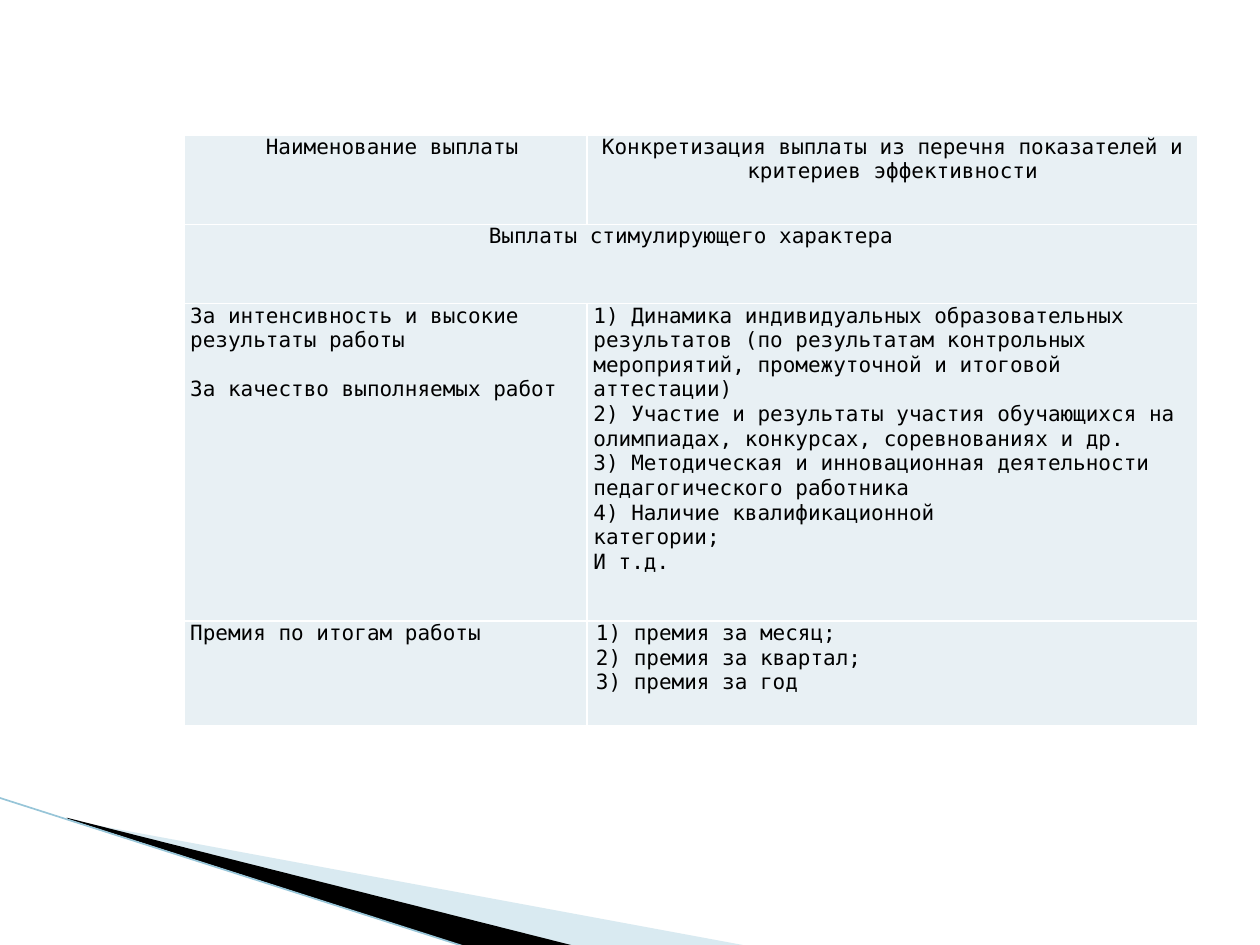
from dataclasses import dataclass

from lxml.etree import SubElement
from pptx import Presentation
from pptx.dml.color import RGBColor
from pptx.enum.shapes import MSO_CONNECTOR
from pptx.enum.text import PP_ALIGN
from pptx.oxml.ns import qn
from pptx.util import Inches, Pt


@dataclass(frozen=True)
class Theme:
    font: str = "DejaVu Sans Mono"
    size: Pt = Pt(12)
    text: RGBColor = RGBColor(0, 0, 0)
    cell: RGBColor = RGBColor(0xE8, 0xF0, 0xF4)
    border: str = "FFFFFF"
    pale_wedge: RGBColor = RGBColor(0xA0, 0xCB, 0xDC)
    dark_wedge: RGBColor = RGBColor(0, 0, 0)
    edge: RGBColor = RGBColor(0x97, 0xC5, 0xD8)


theme = Theme()


def add_wedge(slide, points, color, alpha=None):
    """Draw a closed outline through points in inches; alpha is a percentage."""
    start, *rest = [(Inches(x), Inches(y)) for x, y in points]
    builder = slide.shapes.build_freeform(*start)
    builder.add_line_segments(rest, close=True)
    sp = builder.convert_to_shape()
    sp.shadow.inherit = False
    sp.line.fill.background()
    sp.fill.solid()
    sp.fill.fore_color.rgb = color
    if alpha is not None:
        clr = sp.fill._xPr.find(qn("a:solidFill"))[0]
        SubElement(clr, qn("a:alpha"), val=str(alpha * 1000))


def set_borders(cell):
    tcPr = cell._tc.get_or_add_tcPr()
    for i, side in enumerate(("a:lnL", "a:lnR", "a:lnT", "a:lnB")):
        ln = tcPr.makeelement(qn(side), {"w": str(Pt(1))})
        fill = SubElement(ln, qn("a:solidFill"))
        SubElement(fill, qn("a:srgbClr"), val=theme.border)
        tcPr.insert(i, ln)


prs = Presentation()
prs.slide_width, prs.slide_height = Inches(10), Inches(7.5)
slide = prs.slides.add_slide(prs.slide_layouts[6])

# Corner decoration
add_wedge(slide, [(0.55, 6.51), (5.95, 7.51), (4.56, 7.51), (0.55, 6.5)],
          theme.pale_wedge, alpha=40)
add_wedge(slide, [(0.53, 6.49), (4.57, 7.51), (3.72, 7.52), (0.54, 6.5)],
          theme.dark_wedge)
edge = slide.shapes.add_connector(
    MSO_CONNECTOR.STRAIGHT, Inches(-0.01), Inches(6.33), Inches(3.71), Inches(7.52))
edge.line.color.rgb = theme.edge
edge.line.width = Pt(0.95)
SubElement(edge._element.spPr, qn("a:effectLst"))

# Table of payments
rows = [
    (["Наименование выплаты"],
     ["Конкретизация выплаты из перечня показателей и критериев эффективности"]),
    (["Выплаты стимулирующего характера"], []),
    (["За интенсивность и высокие", "результаты работы",
      "За качество выполняемых работ"],
     ["1) Динамика индивидуальных образовательных результатов (по результатам "
      "контрольных мероприятий, промежуточной и итоговой аттестации)",
      "2) Участие и результаты участия обучающихся на олимпиадах, конкурсах, "
      "соревнованиях и др.",
      "3) Методическая и инновационная деятельности педагогического работника",
      "4) Наличие квалификационной", "категории;", "И т.д."]),
    (["Премия по итогам работы"],
     ["1) премия за месяц;", "2) премия за квартал;", "3) премия за год"]),
]
col_widths = [3.2, 4.85]
row_heights = [0.71, 0.63, 2.52, 0.83]
table = slide.shapes.add_table(
    len(rows), len(col_widths), Inches(1.46), Inches(1.07),
    Inches(sum(col_widths)), Inches(sum(row_heights))).table
table.first_row = table.horz_banding = False
for col, width in zip(table.columns, col_widths):
    col.width = Inches(width)
for row, height in zip(table.rows, row_heights):
    row.height = Inches(height)
table.cell(1, 0).merge(table.cell(1, 1))

for r_index, row in enumerate(rows):
    for c_index, lines in enumerate(row):
        cell = table.cell(r_index, c_index)
        cell.margin_left = cell.margin_right = Inches(0.05)
        cell.margin_top = cell.margin_bottom = 0
        cell.fill.solid()
        cell.fill.fore_color.rgb = theme.cell
        set_borders(cell)
        cell.text_frame.text = "\n".join(lines)
        for p in cell.text_frame.paragraphs:
            p.font.size = theme.size
            for r in p.runs:
                r.font.name = theme.font
                r.font.size = theme.size
                r.font.color.rgb = theme.text

# Alignment, indents and the gap between the two kinds of payment
for position in ((0, 1), (1, 0)):
    table.cell(*position).text_frame.paragraphs[0].alignment = PP_ALIGN.CENTER
header = table.cell(0, 0).text_frame.paragraphs[0]
header._p.get_or_add_pPr().set("marL", str(Inches(0.6)))
for p in table.cell(3, 1).text_frame.paragraphs:
    p._p.get_or_add_pPr().set("indent", str(Inches(0.02)))
table.cell(2, 0).text_frame.paragraphs[2].space_before = Pt(14)

prs.save("out.pptx")
